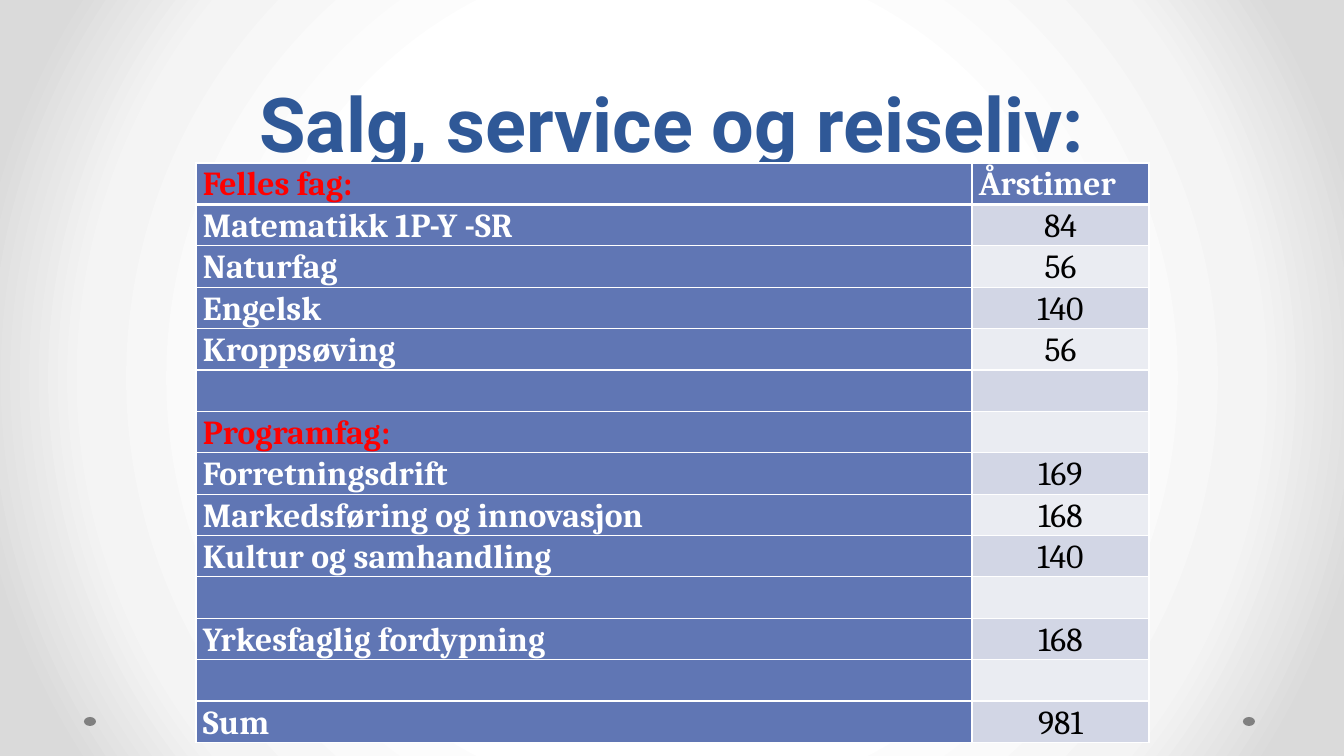
from lxml import etree
from pptx import Presentation
from pptx.dml.color import RGBColor
from pptx.enum.shapes import MSO_SHAPE as Shape
from pptx.enum.text import MSO_ANCHOR as Anchor, PP_ALIGN as Align
from pptx.oxml import parse_xml
from pptx.oxml.ns import nsdecls, qn
from pptx.util import Pt

# Content
TITLE = "Salg, service og reiseliv:"
ROWS = [
    ("Felles fag:", "Årstimer"),
    ("Matematikk 1P-Y -SR", "84"),
    ("Naturfag", "56"),
    ("Engelsk", "140"),
    ("Kroppsøving", "56"),
    ("", ""),
    ("Programfag:", ""),
    ("Forretningsdrift", "169"),
    ("Markedsføring og innovasjon", "168"),
    ("Kultur og samhandling", "140"),
    ("", ""),
    ("Yrkesfaglig fordypning", "168"),
    ("", ""),
    ("Sum", "981"),
]
HEADINGS = {"Felles fag:", "Programfag:"}
COLORS = {
    "title": "2F5897", "heading": "FF0000", "white": "FFFFFF", "black": "000000",
    "subject": "6076B4", "odd": "D2D6E5", "even": "EAECF2", "dot": "808080",
}
BACKGROUND_STOPS = [(50, "FFFFFF"), (76, "F4F4F4"), (92, "DADADA")]

# Layout in px
WIDTH, HEIGHT = 1344, 756
TITLE_BOX = (67, 29, 1210, 230)
TITLE_BOTTOM_INSET = 91
TABLE_LEFT, TABLE_TOP, TABLE_HEIGHT = 196, 163, 580
COLUMN_WIDTHS = (776, 177)
CELL_INSET = 7
DOT_LEFTS, DOT_TOP, DOT_WIDTH, DOT_HEIGHT = (84, 1243), 717, 12, 9


def px(length):
    return round(length * 914400 / 100.8)


def color(name):
    return RGBColor.from_string(COLORS[name])


def format_paragraph(paragraph, font_name, size, color_name, bold, align):
    paragraph.alignment = align
    paragraph.line_spacing = 1.07
    paragraph.space_after = Pt(8)
    for run in paragraph.runs:
        run.font.name = font_name
        run.font.size = Pt(size)
        run.font.bold = bold
        run.font.color.rgb = color(color_name)


def set_borders(cell, widths):
    properties = cell._tc.get_or_add_tcPr()
    for index, (side, width) in enumerate(widths.items()):
        properties.insert(index, parse_xml(
            f'<a:ln{side} {nsdecls("a")} w="{Pt(width)}"><a:solidFill>'
            f'<a:srgbClr val="{COLORS["white"]}"/></a:solidFill></a:ln{side}>'))


def set_background(slide):
    slide.background.fill.solid()
    properties = slide.element.find(".//" + qn("p:bgPr"))
    stops = "".join(f'<a:gs pos="{position * 1000}"><a:srgbClr val="{value}"/></a:gs>'
                    for position, value in BACKGROUND_STOPS)
    gradient = parse_xml(
        f'<a:gradFill {nsdecls("a")} rotWithShape="1"><a:gsLst>{stops}</a:gsLst>'
        '<a:path path="circle"><a:fillToRect l="50000" t="50000" r="50000" b="50000"/>'
        '</a:path></a:gradFill>')
    properties.replace(properties.find(qn("a:solidFill")), gradient)


def add_title(slide):
    title = slide.shapes.title
    title.left, title.top, title.width, title.height = map(px, TITLE_BOX)
    frame = title.text_frame
    frame.text = TITLE
    frame.word_wrap = True
    frame.vertical_anchor = Anchor.BOTTOM
    frame.margin_bottom = px(TITLE_BOTTOM_INSET)
    format_paragraph(frame.paragraphs[0], "Roboto", 54, "title", True, Align.CENTER)


def add_dots(slide):
    for left in DOT_LEFTS:
        dot = slide.shapes.add_shape(
            Shape.OVAL, px(left), px(DOT_TOP), px(DOT_WIDTH), px(DOT_HEIGHT))
        dot.shadow.inherit = False
        dot.fill.solid()
        dot.fill.fore_color.rgb = color("dot")
        dot.line.fill.background()


def add_hours_table(slide):
    table = slide.shapes.add_table(
        len(ROWS), len(COLUMN_WIDTHS), px(TABLE_LEFT), px(TABLE_TOP),
        px(sum(COLUMN_WIDTHS)), px(TABLE_HEIGHT)).table
    for column, width in zip(table.columns, COLUMN_WIDTHS):
        column.width = px(width)
    for row_index, texts in enumerate(ROWS):
        table.rows[row_index].height = px(TABLE_HEIGHT / len(ROWS))
        for column_index, text in enumerate(texts):
            cell = table.cell(row_index, column_index)
            cell.margin_left = cell.margin_right = px(CELL_INSET)
            cell.margin_top = cell.margin_bottom = 0
            is_hours = row_index > 0 and column_index == 1
            band = "odd" if row_index % 2 else "even"
            cell.fill.solid()
            cell.fill.fore_color.rgb = color(band if is_hours else "subject")
            set_borders(cell, {"L": 1, "R": 1, "T": 3 if row_index == 1 else 1,
                               "B": 3 if row_index == 0 else 1})
            cell.text_frame.text = text
            text_color = ("heading" if text in HEADINGS
                          else "black" if is_hours else "white")
            format_paragraph(cell.text_frame.paragraphs[0], "Cambria", 24, text_color,
                             not is_hours, Align.CENTER if is_hours else Align.LEFT)


def main():
    presentation = Presentation()
    presentation.slide_width, presentation.slide_height = px(WIDTH), px(HEIGHT)
    slide = presentation.slides.add_slide(presentation.slide_layouts[5])
    set_background(slide)
    add_title(slide)
    add_dots(slide)
    add_hours_table(slide)
    presentation.save("out.pptx")


if __name__ == "__main__":
    main()
